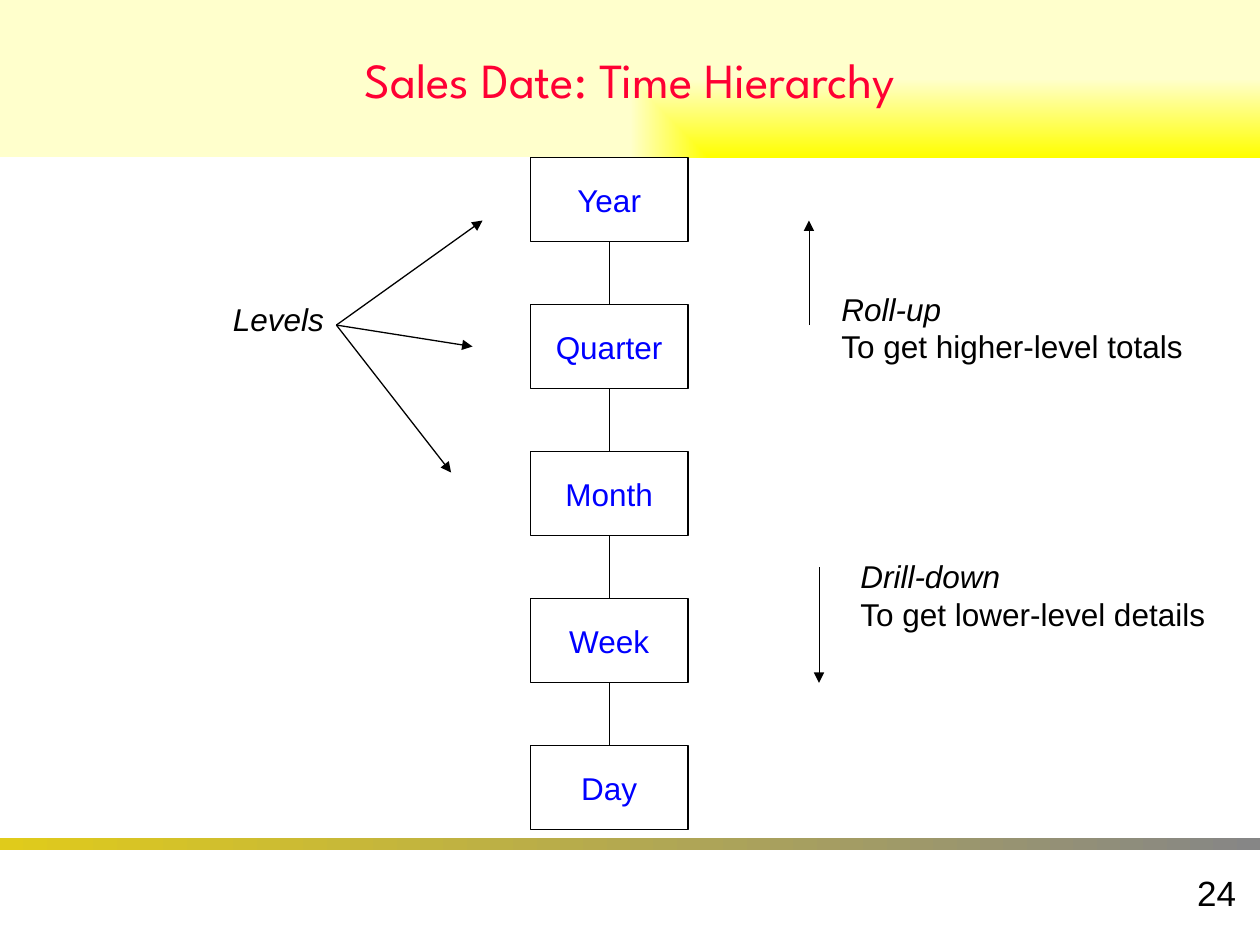
from pptx import Presentation
from pptx import oxml
from pptx.dml.color import RGBColor
from pptx.enum import shapes, text
from pptx.oxml import ns
from pptx.util import Inches, Pt

BLACK = RGBColor(0, 0, 0)
BLUE = RGBColor(0, 0, 0xFF)
RED = RGBColor(0xFF, 0, 0x33)
YELLOW = RGBColor(0xFF, 0xFF, 0)
CREAM = RGBColor(0xFF, 0xFF, 0xCC)
GOLD = RGBColor(0xE0, 0xCB, 0x1B)
GREY = RGBColor(0x86, 0x86, 0x86)

# Content
TITLE = "Sales Date: Time Hierarchy"
LEVELS = ["Year", "Quarter", "Month", "Week", "Day"]
NOTES = [  # left, top, width, height, lines (the first in italics)
    (1.75, 2.33, 0.92, 0.4, ["Levels"]),
    (6.58, 2.25, 2.94, 0.7, ["Roll-up", "To get higher-level totals"]),
    (6.73, 4.37, 2.97, 0.7, ["Drill-down", "To get lower-level details"]),
]
HUB = (2.67, 2.58)
ARROWS = [  # from, to, width
    (HUB, (3.83, 1.75), 0.75),
    (HUB, (3.75, 2.75), 0.75),
    (HUB, (3.58, 3.75), 0.75),
    ((6.42, 2.58), (6.42, 1.75), 0.25),
    ((6.5, 4.5), (6.5, 5.42), 0.25),
]
BOX_X, BOX_Y, BOX_W, BOX_H = 4.21, 1.25, 1.25, 0.67
STEP = 3.5 / 3

MID, TOP = text.MSO_ANCHOR.MIDDLE, text.MSO_ANCHOR.TOP
LEFT, MIDDLE, RIGHT = (text.PP_ALIGN.LEFT, text.PP_ALIGN.CENTER,
                       text.PP_ALIGN.RIGHT)


def place(shape, *box):
    shape.left, shape.top, shape.width, shape.height = map(Inches, box)


def write(shape, lines, size=18, font="Arial", color=BLACK, align=LEFT,
          anchor=TOP, wrap=False, lead=False, grow=False):
    """Fill a shape with lines of text; lead sets the first in italics."""
    frame = shape.text_frame
    frame.text = "\n".join(lines)
    frame.word_wrap = wrap
    frame.auto_size = (text.MSO_AUTO_SIZE.SHAPE_TO_FIT_TEXT if grow
                       else text.MSO_AUTO_SIZE.NONE)
    frame.vertical_anchor = anchor
    for i, para in enumerate(frame.paragraphs):
        para.alignment = align
        for run in para.runs:
            run.font.size, run.font.name = Pt(size), font
            run.font.color.rgb = color
            run.font.italic = lead and i == 0


def blend(shape, first, last):
    """Give a shape a left-to-right gradient and return its XML."""
    shape.fill.gradient()
    shape.fill.gradient_angle = 0
    for stop, color, pos in zip(shape.fill.gradient_stops, (first, last), (0, 1)):
        stop.color.rgb, stop.position = color, pos
    return shape._element.spPr.find(ns.qn("a:gradFill"))


def link(slide, start, end, width=0.75, head=False):
    line = slide.shapes.add_connector(
        shapes.MSO_CONNECTOR.STRAIGHT, *map(Inches, start + end))
    line.line.color.rgb, line.line.width = BLACK, Pt(width)
    props = line._element.spPr
    if head:
        tip = oxml.parse_xml(f'<a:tailEnd {ns.nsdecls("a")} type="triangle"/>')
        props.find(ns.qn("a:ln")).append(tip)
    props.append(oxml.parse_xml(f'<a:effectLst {ns.nsdecls("a")}/>'))
    return line


def main():
    deck = Presentation()
    deck.slide_width, deck.slide_height = Inches(10), Inches(7.5)
    slide = deck.slides.add_slide(deck.slide_layouts[5])
    rect = shapes.MSO_SHAPE.RECTANGLE

    # Title band, shaded from its lower right corner
    title = slide.shapes.title
    place(title, 0, 0, 10, 1.25)
    write(title, [TITLE], size=28, font="League Spartan", color=RED,
          align=MIDDLE, anchor=MID, wrap=True)
    grad = blend(title, YELLOW, CREAM)
    grad.replace(grad.find(ns.qn("a:lin")), oxml.parse_xml(
        f'<a:path {ns.nsdecls("a")} path="rect">'
        '<a:fillToRect l="100000" t="100000"/></a:path>'))

    # Footer bar and page number
    bar = slide.shapes.add_shape(rect, *map(Inches, (0, 6.65, 10, 0.1)))
    bar.shadow.inherit = False
    bar.line.fill.background()
    blend(bar, GOLD, GREY)
    page = slide.shapes.add_textbox(*map(Inches, (7.83, 6.83, 2.08, 0.5)))
    write(page, ["24"], size=20, align=RIGHT, anchor=MID)

    # Chain of levels
    boxes = []
    for i, name in enumerate(LEVELS):
        spot = (BOX_X, BOX_Y + i * STEP, BOX_W, BOX_H)
        box = slide.shapes.add_shape(rect, *map(Inches, spot))
        box.shadow.inherit = False
        box.fill.background()
        box.line.color.rgb, box.line.width = BLACK, Pt(0.75)
        write(box, [name], color=BLUE, align=MIDDLE, anchor=MID)
        boxes.append(box)
    for upper, lower in zip(boxes, boxes[1:]):
        line = link(slide, (0, 0), (0, 0))
        line.begin_connect(upper, 2)
        line.end_connect(lower, 0)

    # Notes and arrows
    for *spot, lines in NOTES:
        note = slide.shapes.add_textbox(*map(Inches, spot))
        write(note, lines, lead=True, grow=True)
    for start, end, width in ARROWS:
        link(slide, start, end, width, head=True)

    deck.save("out.pptx")


if __name__ == "__main__":
    main()
